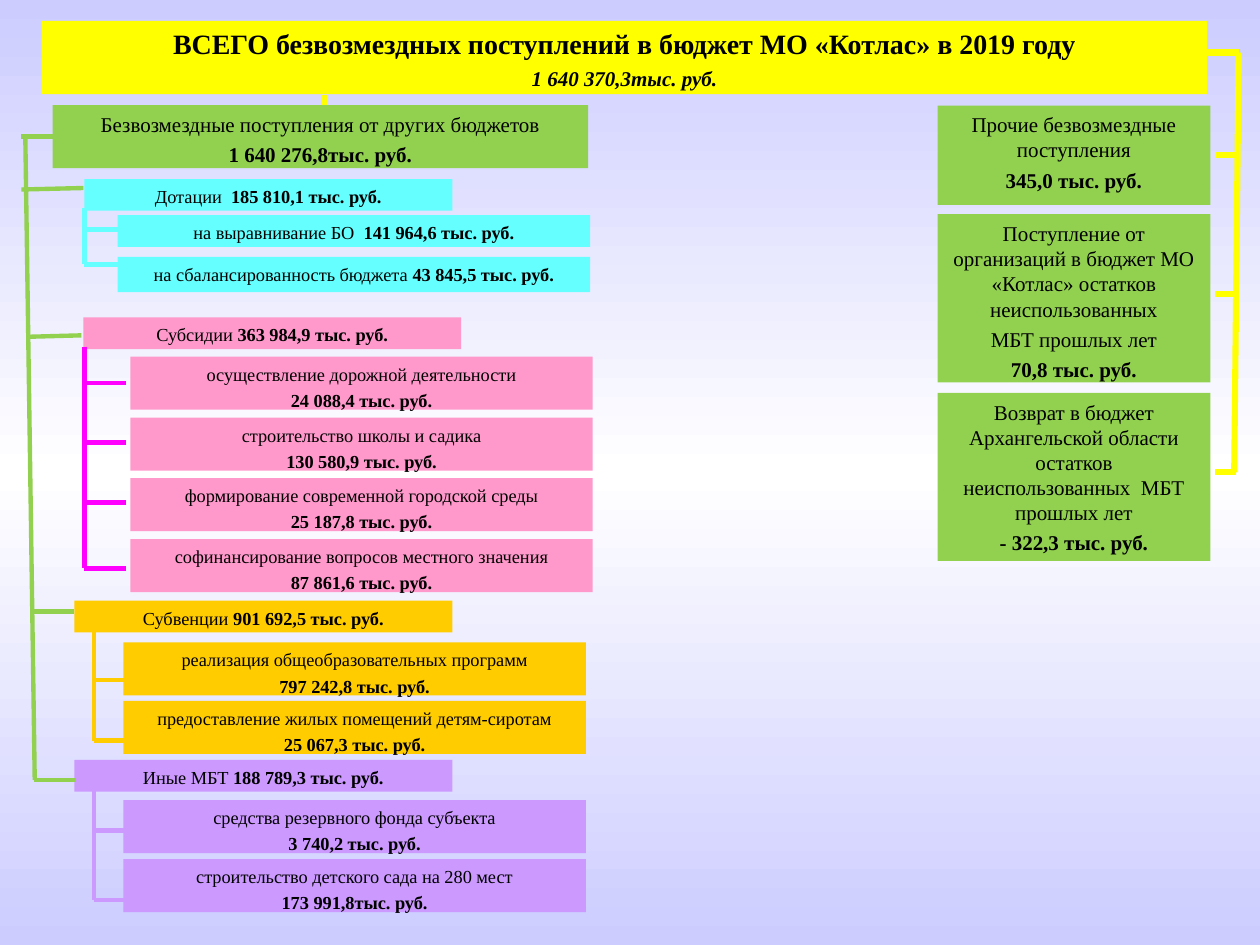
from copy import deepcopy

from pptx import Presentation
from pptx.dml.color import RGBColor
from pptx.enum.shapes import MSO_CONNECTOR, MSO_SHAPE
from pptx.enum.text import MSO_ANCHOR, PP_ALIGN
from pptx.oxml.ns import qn
from pptx.oxml.xmlchemy import OxmlElement
from pptx.util import Cm, Pt

FONT = "Times New Roman"
COLORS = {
    "edge": "CCCCFF", "middle": "FFFFFF", "text": "000000",
    "yellow": "FFFF00", "green": "92D050", "cyan": "66FFFF", "pink": "FF99CC",
    "magenta": "FF00FF", "amber": "FFCC00", "violet": "CC99FF",
}

# Each item: plain text, bold text, top of its box, height of its branch line
# (both measured from the top of the group).
GROUPS = [
    dict(box=(1.7, 3.61, 7.42, 0.64), heading=("Дотации", "  185 810,1 тыс. руб."),
         fill="cyan", line="cyan", trunk=0, reach=0.7, indent=0.67, width=9.53,
         inline=True, heights=(0.64, 0.71), items=[
             ("на выравнивание БО  ", "141 964,6 тыс. руб.", 0.73, 1.02),
             ("на сбалансированность бюджета ", "43 845,5 тыс. руб.", 1.57, 1.72)]),
    dict(box=(1.68, 6.4, 7.62, 0.64), heading=("Субсидии", " 363 984,9 тыс. руб."),
         fill="pink", line="magenta", trunk=0.02, reach=0.84, indent=0.95, width=9.32,
         inline=False, heights=(1.07,) * 4, items=[
             ("осуществление дорожной деятельности", "24 088,4 тыс. руб.", 0.79, 1.32),
             ("строительство школы и садика", "130 580,9 тыс. руб.", 2.02, 2.52),
             ("формирование современной городской среды", "25 187,8 тыс. руб.", 3.24, 3.73),
             ("софинансирование вопросов местного значения", "87 861,6 тыс. руб.", 4.47, 5.06)]),
    dict(box=(1.5, 12.11, 7.62, 0.64), heading=("Субвенции", " 901 692,5 тыс. руб."),
         fill="amber", line="amber", trunk=0.4, reach=0.64, indent=0.99, width=9.32,
         inline=False, heights=(1.07,) * 2, items=[
             ("реализация общеобразовательных программ", "797 242,8 тыс. руб.", 0.84, 1.6),
             ("предоставление жилых помещений детям-сиротам", "25 067,3 тыс. руб.", 2.02, 2.82)]),
    dict(box=(1.5, 15.32, 7.62, 0.64), heading=("Иные МБТ", " 188 789,3 тыс. руб."),
         fill="violet", line="violet", trunk=0.4, reach=0.64, indent=0.99, width=9.32,
         inline=False, heights=(1.07,) * 2, items=[
             ("средства резервного фонда субъекта", "3 740,2 тыс. руб.", 0.81, 1.42),
             ("строительство детского сада на 280 мест", "173 991,8тыс. руб.", 2, 2.82)]),
]

# Each entry: top from the column top, height, paragraphs of (plain, bold) text.
OTHER_INCOME = [
    (0, 2, [("Прочие безвозмездные поступления", ""), ("", "345,0 тыс. руб.")]),
    (2.19, 3.39, [("Поступление от организаций в бюджет МО «Котлас» остатков неиспользованных", ""),
                  ("МБТ прошлых лет", ""), ("", "70,8 тыс. руб.")]),
    (5.79, 3.39, [("Возврат в бюджет Архангельской области остатков "
                   "неиспользованных  МБТ прошлых лет", ""), ("", "- 322,3 тыс. руб.")]),
]


def rgb(name):
    return RGBColor.from_string(COLORS[name])


def add_box(page, box, fill, paragraphs, size):
    """Draw a filled rectangle whose paragraphs are (plain, bold) pairs."""
    shape = page.shapes.add_shape(MSO_SHAPE.RECTANGLE, *map(Cm, box))
    shape.shadow.inherit = False
    shape.fill.solid()
    shape.fill.fore_color.rgb = rgb(fill)
    shape.line.fill.background()
    frame = shape.text_frame
    frame.word_wrap = True
    frame.vertical_anchor = MSO_ANCHOR.TOP
    for number, (plain, bold) in enumerate(paragraphs):
        para = frame.paragraphs[0] if number == 0 else frame.add_paragraph()
        para.alignment = PP_ALIGN.CENTER
        para.space_before = Pt(round(size * 0.23, 1))
        for text, is_bold in ((plain, False), (bold, True)):
            if text:
                span = para.add_run()
                span.text = text
                span.font.name = FONT
                span.font.size = Pt(size)
                span.font.bold = is_bold
                span.font.color.rgb = rgb("text")
    return shape


def add_line(page, start, end, color, weight=2.5):
    line = page.shapes.add_connector(MSO_CONNECTOR.STRAIGHT, *map(Cm, start + end))
    line.line.color.rgb = rgb(color)
    line.line.width = Pt(weight)
    line._element.spPr.append(OxmlElement("a:effectLst"))


def add_background(page):
    fill = page.background.fill
    fill.gradient()
    fill.gradient_angle = 90
    first, last = fill.gradient_stops
    for stop, position in ((first, 0), (last, 1)):
        stop.color.rgb = rgb("edge")
        stop.position = position
    stops = page._element.find(".//" + qn("a:gsLst"))
    stops.insert(1, deepcopy(stops[0]))
    middle = fill.gradient_stops[1]
    middle.position = 0.5
    middle.color.rgb = rgb("middle")


def add_title(page, box):
    shape = add_box(page, box, "yellow", [
        ("", "ВСЕГО безвозмездных поступлений в бюджет МО «Котлас» в 2019 году"),
        ("", "1 640 370,3тыс. руб.")], 16)
    total = shape.text_frame.paragraphs[1]
    total.space_before = Pt(2.8)
    total.runs[0].font.size = Pt(12)
    total.runs[0].font.italic = True


def add_group(page, box, heading, fill, line, trunk, reach, indent, width,
              inline, heights, items):
    """Draw a heading with its items hanging from a trunk line."""
    left, top, _, height = box
    add_box(page, box, fill, [heading], 10.5)
    for (label, amount, offset, _), item_height in zip(items, heights):
        paragraphs = [(label, amount)] if inline else [(label, ""), ("", amount)]
        item_box = (left + indent, top + offset, width, item_height)
        add_box(page, item_box, fill, paragraphs, 10.5)
    trunk_x = left + trunk
    add_line(page, (trunk_x, top + height - 0.05), (trunk_x, top + items[-1][3]), line)
    for *_, branch in items:
        add_line(page, (trunk_x, top + branch), (trunk_x + reach, top + branch), line)


def add_budget_tree(page, box):
    """Draw the heading for other budgets and the trunk that joins its groups."""
    left, top, _, _ = box
    add_line(page, (6.55, top - 0.2), (6.55, top), "yellow", 3.5)
    add_box(page, box, "green", [("Безвозмездные поступления от других бюджетов", ""),
                                 ("", "1 640 276,8тыс. руб.")], 12)
    for group in GROUPS:
        add_group(page, **group)
    add_line(page, (left - 0.55, top + 0.62), (left - 0.36, top + 13.6), "green")
    branches = [(-0.63, 0, 0.63, 0.63), (-0.63, 0.62, 1.7, 1.67),
                (-0.53, 0.58, 4.67, 4.64), (-0.4, 0.43, 10.21, 10.21),
                (-0.37, 0.48, 13.6, 13.6)]
    for x1, x2, y1, y2 in branches:
        add_line(page, (left + x1, top + y1), (left + x2, top + y2), "green")


def add_other_income(page, box):
    """Draw the right column and the bracket that ties it to the title."""
    left, top, width, _ = box
    for offset, height, paragraphs in OTHER_INCOME:
        add_box(page, (left, top + offset, width, height), "green", paragraphs, 12)
    right = left + width
    bracket_top, bracket_bottom = top - 1.07, top + 7.39
    add_line(page, (right - 0.07, bracket_top), (right + 0.57, bracket_top), "yellow", 3.5)
    add_line(page, (right + 0.57, bracket_top), (right + 0.48, bracket_bottom), "yellow", 3.5)
    for offset in (0.99, 3.79, 7.39):
        add_line(page, (right + 0.51, top + offset), (right + 0.1, top + offset), "yellow", 3.5)


def main():
    deck = Presentation()
    deck.slide_width, deck.slide_height = Cm(25.4), Cm(19.05)
    page = deck.slides.add_slide(deck.slide_layouts[6])
    add_background(page)
    add_title(page, (0.84, 0.42, 23.5, 1.48))
    add_budget_tree(page, (1.06, 2.12, 10.8, 1.27))
    add_other_income(page, (18.9, 2.13, 5.5, 9.18))
    deck.save("out.pptx")


if __name__ == "__main__":
    main()
